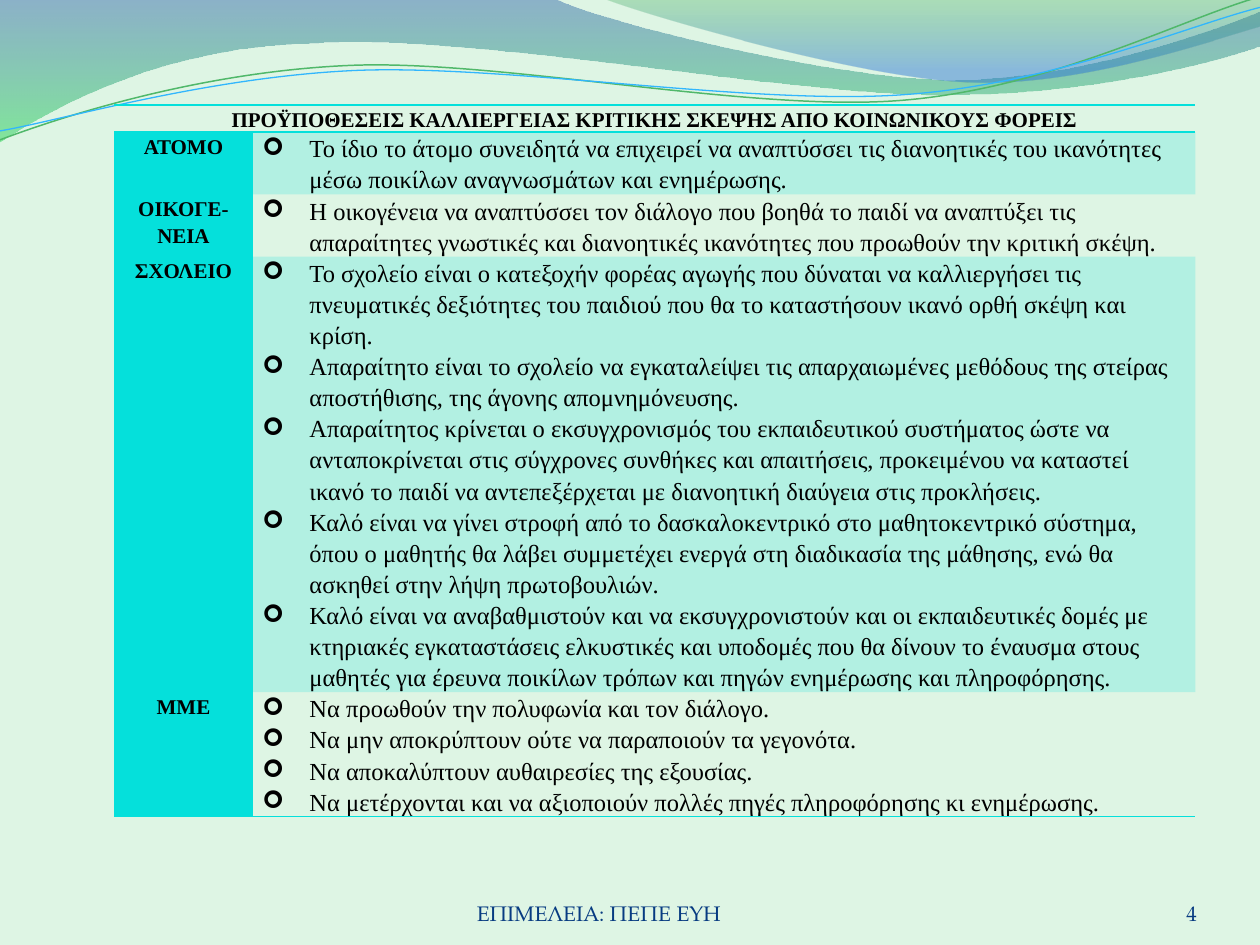
"""Build a slide with a table on who can cultivate critical thinking."""
from dataclasses import dataclass

from lxml import etree
from pptx import Presentation
from pptx import util as u
from pptx.dml.color import RGBColor
from pptx.enum import text
from pptx.oxml.ns import qn


@dataclass(frozen=True)
class Theme:
    background: str = "DEF5E4"
    accent: str = "05E0DB"
    ink: str = "000000"
    footer: str = "073B81"
    green_line: str = "50B86A"
    blue_line: str = "31B6FD"
    wide_wave: tuple = ((0, "2960A7", 45), (1, "35DA5E", 55))
    right_wave: tuple = ((0, "36A752", 30), (0.8, "2472D3", 45))
    label_size: int = 12
    body_size: int = 14
    table_font: str = "Times New Roman"
    footer_font: str = "TeX Gyre Pagella"
    bullet_font: str = "Wingdings"
    plain_table: str = "{2D5ABB26-0587-4C30-8999-92F81FD0307C}"


WIDE_WAVE = [(0, 0), (11.18, -0.03),
             (12.09, 0.43, 16.87, 1.6, 19.25, 1.6), (21.67, 1.6, 24.33, 0.66, 25.4, 0.23),
             (25.43, 0.91), (24.97, 1.12, 22.1, 1.93, 18.95, 1.91),
             (15.8, 1.91, 9.7, 0.71, 6.53, 0.86), (3.28, 0.91, 1.17, 2.11, -0.03, 2.87)]
RIGHT_WAVE = [(12.17, -0.03), (12.93, 0.28, 17.32, 1.57, 19.53, 1.65),
              (21.74, 1.75, 24.41, 0.81, 25.4, 0.53), (25.4, 0)]
GREEN_CURVE = [(0, 2.82), (1.22, 2.36, 4.01, 1.45, 7.04, 1.32),
               (10.03, 1.19, 15.06, 2.26, 18.11, 2.03), (21.16, 1.8, 23.83, 0.38, 25.35, -0.05)]
BLUE_CURVE = [(0, 2.64), (1.19, 2.44, 4.17, 1.55, 7.19, 1.42),
              (10.24, 1.3, 15.16, 2.13, 18.21, 1.91), (21.23, 1.7, 23.9, 0.53, 25.4, 0.15)]

HEADING = "ΠΡΟΫΠΟΘΕΣΕΙΣ ΚΑΛΛΙΕΡΓΕΙΑΣ ΚΡΙΤΙΚΗΣ ΣΚΕΨΗΣ ΑΠΟ ΚΟΙΝΩΝΙΚΟΥΣ ΦΟΡΕΙΣ"
AGENTS = [
    ("ΑΤΟΜΟ", [
        "Το ίδιο το άτομο συνειδητά να επιχειρεί να αναπτύσσει τις διανοητικές του ικανότητες "
        "μέσω ποικίλων αναγνωσμάτων και ενημέρωσης."]),
    ("ΟΙΚΟΓΕ-ΝΕΙΑ", [
        "Η οικογένεια να αναπτύσσει τον διάλογο που βοηθά το παιδί να αναπτύξει τις απαραίτητες "
        "γνωστικές και διανοητικές ικανότητες που προωθούν την κριτική σκέψη."]),
    ("ΣΧΟΛΕΙΟ", [
        "Το σχολείο είναι ο κατεξοχήν φορέας αγωγής που δύναται να καλλιεργήσει τις πνευματικές "
        "δεξιότητες του παιδιού που θα το καταστήσουν ικανό ορθή σκέψη και κρίση.",
        "Απαραίτητο είναι το σχολείο να εγκαταλείψει τις απαρχαιωμένες μεθόδους της στείρας "
        "αποστήθισης, της άγονης απομνημόνευσης.",
        "Απαραίτητος κρίνεται ο εκσυγχρονισμός του εκπαιδευτικού συστήματος ώστε να "
        "ανταποκρίνεται στις σύγχρονες συνθήκες και απαιτήσεις, προκειμένου να καταστεί ικανό "
        "το παιδί να αντεπεξέρχεται με διανοητική διαύγεια στις προκλήσεις.",
        "Καλό είναι να γίνει στροφή από το δασκαλοκεντρικό στο μαθητοκεντρικό σύστημα, όπου ο "
        "μαθητής θα λάβει συμμετέχει ενεργά στη διαδικασία της μάθησης, ενώ θα ασκηθεί στην "
        "λήψη πρωτοβουλιών.",
        "Καλό είναι να αναβαθμιστούν και να εκσυγχρονιστούν και οι εκπαιδευτικές δομές με "
        "κτηριακές εγκαταστάσεις ελκυστικές και υποδομές που θα δίνουν το έναυσμα στους μαθητές "
        "για έρευνα ποικίλων τρόπων και πηγών ενημέρωσης και πληροφόρησης."]),
    ("ΜΜΕ", [
        "Να προωθούν την πολυφωνία και τον διάλογο.",
        "Να μην αποκρύπτουν ούτε να παραποιούν τα γεγονότα.",
        "Να αποκαλύπτουν αυθαιρεσίες της εξουσίας.",
        "Να μετέρχονται και να αξιοποιούν πολλές πηγές πληροφόρησης κι ενημέρωσης."]),
]
COLUMN_WIDTHS = [2.8, 19]
ROW_HEIGHTS = [0.48, 1.19, 1.14, 8.53, 2.41]


def rgb(value):
    return RGBColor.from_string(value)


def set_opacity(parent, percents):
    for color, percent in zip(parent.iter(qn("a:srgbClr")), percents):
        etree.SubElement(color, qn("a:alpha"), val=str(percent * 1000))


class SlideWriter:
    def __init__(self, page, theme):
        self.page, self.theme = page, theme
        fill = page.background.fill
        fill.solid()
        fill.fore_color.rgb = rgb(theme.background)

    def outline(self, steps, closed):
        """Draw corner points as lines and six-number steps as Bézier curves."""
        groups = [[(u.Cm(x), u.Cm(y)) for x, y in zip(step[::2], step[1::2])] for step in steps]
        builder = self.page.shapes.build_freeform(*groups[0][0])
        builder.add_line_segments([point for group in groups[1:] for point in group], close=closed)
        shape = builder.convert_to_shape()
        shape.shadow.inherit = False
        segments = iter(list(shape._element.iter(qn("a:lnTo"))))
        for group in groups[1:]:
            first, *others = [next(segments) for _ in group]
            if others:
                first.tag = qn("a:cubicBezTo")
            for other in others:
                first.append(other[0])
                other.getparent().remove(other)
        return shape

    def wave(self, steps, stops):
        shape = self.outline(steps, True)
        shape.line.fill.background()
        shape.fill.gradient()
        shape.fill.gradient_angle = 270
        for stop, (position, color, _) in zip(shape.fill.gradient_stops, stops):
            stop.position = position
            stop.color.rgb = rgb(color)
        set_opacity(shape._element.spPr, [opacity for *_, opacity in stops])

    def curve(self, steps, color, width):
        shape = self.outline(steps, False)
        shape.fill.background()
        shape.line.color.rgb = rgb(color)
        shape.line.width = u.Pt(width)

    def style(self, para, size, font, color, align, bold=False):
        para.alignment = align
        para.font.size, para.font.name, para.font.bold = u.Pt(size), font, bold
        para.font.color.rgb = rgb(color)

    def label(self, words, left, top, width, height, align):
        box = self.page.shapes.add_textbox(*map(u.Cm, (left, top, width, height)))
        frame = box.text_frame
        frame.word_wrap = True
        frame.vertical_anchor = text.MSO_ANCHOR.BOTTOM
        frame.margin_left = frame.margin_right = frame.margin_top = frame.margin_bottom = 0
        frame.text = words
        self.style(frame.paragraphs[0], self.theme.label_size, self.theme.footer_font,
                   self.theme.footer, align)

    def border(self, cell, *sides):
        properties = cell._tc.get_or_add_tcPr()
        for index, side in enumerate(sides):
            line = etree.Element(qn(f"a:{side}"), w=str(u.Pt(1)))
            fill = etree.SubElement(line, qn("a:solidFill"))
            etree.SubElement(fill, qn("a:srgbClr"), val=self.theme.accent)
            properties.insert(index, line)

    def bullet(self, para):
        properties = para._p.get_or_add_pPr()
        properties.set("marL", str(u.Cm(0.95)))
        properties.set("indent", str(u.Cm(-0.95)))
        etree.SubElement(properties, qn("a:buFont"), typeface=self.theme.bullet_font)
        etree.SubElement(properties, qn("a:buChar"), char="➢")

    def cell(self, cell, lines, bulleted=False, opacity=0):
        theme = self.theme
        cell.margin_left = cell.margin_right = u.Cm(0.19)
        cell.margin_top = cell.margin_bottom = 0
        if opacity:
            cell.fill.solid()
            cell.fill.fore_color.rgb = rgb(theme.accent)
            if opacity < 100:
                set_opacity(cell._tc.tcPr, [opacity])
        else:
            cell.fill.background()
        cell.text_frame.text = "\n".join(lines)
        size = theme.body_size if bulleted else theme.label_size
        align = text.PP_ALIGN.LEFT if bulleted else text.PP_ALIGN.CENTER
        for para in cell.text_frame.paragraphs:
            para.line_spacing = 1.15
            if bulleted:
                self.bullet(para)
            self.style(para, size, theme.table_font, theme.ink, align, bold=not bulleted)

    def table(self, heading, agents):
        frame = self.page.shapes.add_table(
            len(agents) + 1, 2, *map(u.Cm, (2.3, 2.12, sum(COLUMN_WIDTHS), 15.57)))
        table = frame.table
        table.first_row = table.horz_banding = False
        table._tbl.tblPr.find(qn("a:tableStyleId")).text = self.theme.plain_table
        for column, width in zip(table.columns, COLUMN_WIDTHS):
            column.width = u.Cm(width)
        for row, height in zip(table.rows, ROW_HEIGHTS):
            row.height = u.Cm(height)
        frame.height = u.Cm(15.57)
        table.cell(0, 0).merge(table.cell(0, 1))
        self.cell(table.cell(0, 0), [heading])
        for number, (name, duties) in enumerate(agents, 1):
            self.cell(table.cell(number, 0), [name], opacity=100)
            self.cell(table.cell(number, 1), duties, bulleted=True, opacity=20 * (number % 2))
        for column in range(2):
            self.border(table.cell(0, column), "lnT", "lnB")
            self.border(table.cell(len(agents), column), "lnB")


def main():
    deck = Presentation()
    deck.slide_width, deck.slide_height = u.Cm(25.4), u.Cm(19.05)
    theme = Theme()
    writer = SlideWriter(deck.slides.add_slide(deck.slide_layouts[6]), theme)
    writer.wave(WIDE_WAVE, theme.wide_wave)
    writer.wave(RIGHT_WAVE, theme.right_wave)
    writer.curve(GREEN_CURVE, theme.green_line, 0.85)
    writer.curve(BLUE_CURVE, theme.blue_line, 0.75)
    writer.table(HEADING, AGENTS)
    writer.label("ΕΠΙΜΕΛΕΙΑ: ΠΕΠΕ ΕΥΗ", 7.41, 18.14, 9.32, 0.53, text.PP_ALIGN.CENTER)
    writer.label("4", 22.02, 17.65, 2.11, 1.02, text.PP_ALIGN.RIGHT)
    deck.save("out.pptx")


if __name__ == "__main__":
    main()
